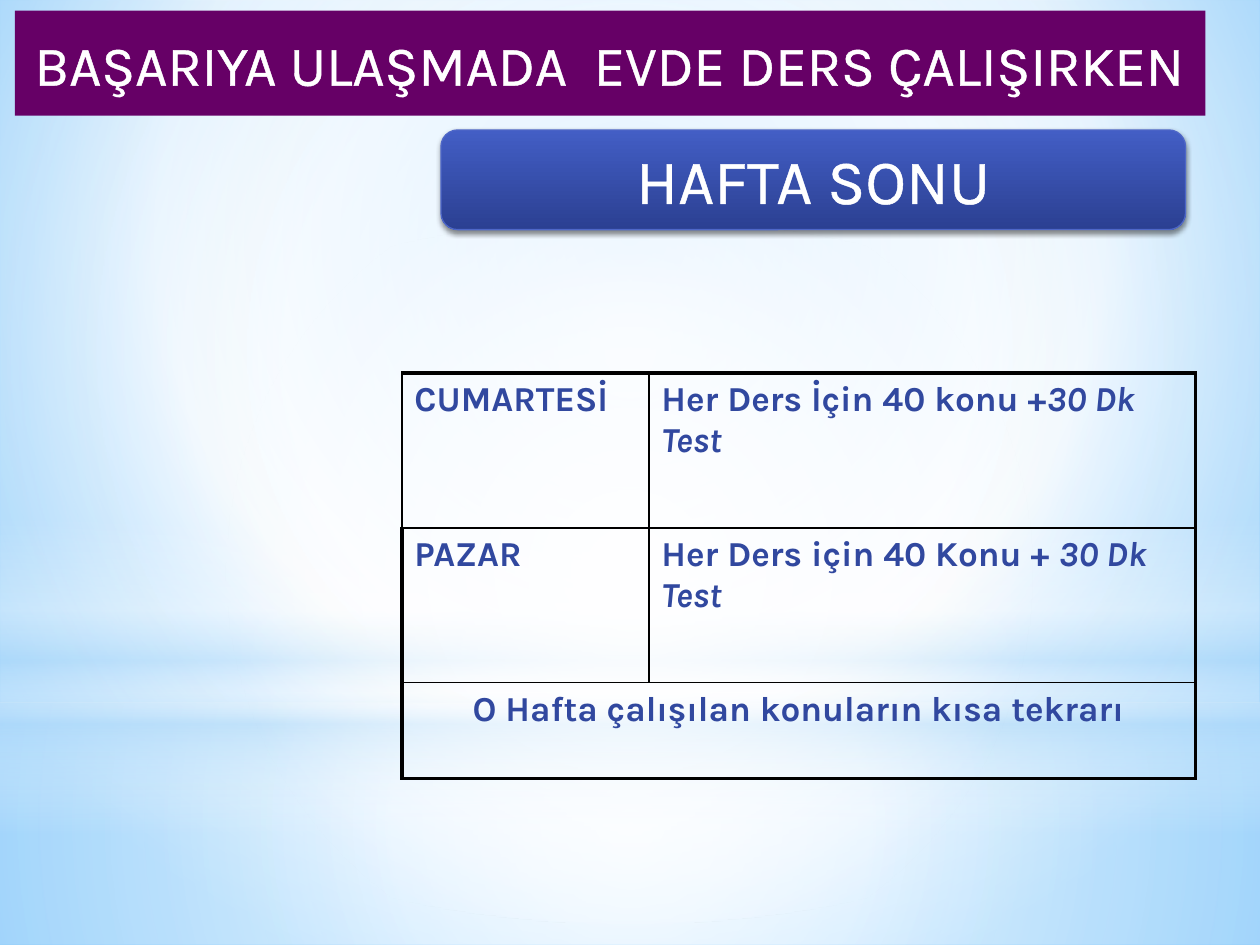
from lxml import etree
from pptx import Presentation
from pptx.dml.color import RGBColor
from pptx.enum.shapes import MSO_SHAPE
from pptx.enum.text import MSO_ANCHOR, MSO_AUTO_SIZE, PP_ALIGN
from pptx.oxml.ns import qn
from pptx.util import Cm, Pt

RECTANGLE = MSO_SHAPE.RECTANGLE
ROUNDED = MSO_SHAPE.ROUNDED_RECTANGLE
ELLIPSE = MSO_SHAPE.OVAL
CENTER, LEFT = PP_ALIGN.CENTER, PP_ALIGN.LEFT
TOP, MIDDLE = MSO_ANCHOR.TOP, MSO_ANCHOR.MIDDLE
GROW = MSO_AUTO_SIZE.SHAPE_TO_FIT_TEXT
HALO = (50, 50, 50, 50)


def color(value):
    return RGBColor.from_string(value)


def node(parent, tag, **attributes):
    values = {key: str(value) for key, value in attributes.items()}
    return etree.SubElement(parent, qn(tag), values)


class StudySlide:
    """Draws the study plan elements on one slide in a shared style."""

    font = "Karla"
    white, black, ink = "FFFFFF", "000000", "31489F"

    def __init__(self, deck):
        self.slide = deck.slides.add_slide(deck.slide_layouts[5])

    def gradient(self, owner, fill, stops, focus=None):
        fill.solid()
        solid = owner.find(qn("a:solidFill"))
        grad = etree.Element(qn("a:gradFill"), rotWithShape="1")
        stop_list = node(grad, "a:gsLst")
        for position, tint, opacity in stops:
            stop = node(stop_list, "a:gs", pos=position * 1000)
            shade = node(stop, "a:srgbClr", val=tint)
            if opacity < 100:
                node(shade, "a:alpha", val=opacity * 1000)
        if focus:
            path = node(grad, "a:path", path="circle")
            sides = {side: value * 1000 for side, value in zip("ltrb", focus)}
            node(path, "a:fillToRect", **sides)
        else:
            node(grad, "a:lin", ang=90 * 60000, scaled=0)
        owner.replace(solid, grad)

    def background(self, stops, focus):
        fill = self.slide.background.fill
        fill.solid()
        owner = self.slide.element.find(".//" + qn("p:bgPr"))
        self.gradient(owner, fill, stops, focus)

    def panel(self, kind, box, stops, focus=None):
        panel = self.slide.shapes.add_shape(kind, *map(Cm, box))
        self.gradient(panel.element.spPr, panel.fill, stops, focus)
        panel.line.fill.background()
        panel.shadow.inherit = False
        return panel

    def paragraph(self, paragraph, runs, size, tint, align, before, bold=False):
        paragraph.alignment = align
        spacing = etree.Element(qn("a:spcBef"))
        node(spacing, "a:spcPct", val=before * 1000)
        paragraph._p.get_or_add_pPr().insert(0, spacing)
        for text, italic in runs:
            run = paragraph.add_run()
            run.text = text
            style = {"name": self.font, "size": Pt(size), "bold": bold, "italic": italic}
            for key, value in style.items():
                setattr(run.font, key, value)
            run.font.color.rgb = color(tint)

    def heading(self, shape, text, size, anchor):
        frame = shape.text_frame
        layout = {"word_wrap": True, "auto_size": GROW, "vertical_anchor": anchor}
        for key, value in layout.items():
            setattr(frame, key, value)
        line = frame.paragraphs[0]
        self.paragraph(line, [(text, False)], size, self.white, CENTER, 50)
        properties = line._p.get_or_add_pPr()
        properties.set("marL", str(Cm(0.95)))
        properties.set("indent", str(Cm(-0.95)))
        outline = etree.Element(qn("a:ln"), w=str(Pt(1.45)))
        node(node(outline, "a:solidFill"), "a:srgbClr", val=self.white)
        line.runs[0].font._element.insert(0, outline)

    def title(self, text, box, fill):
        title = self.slide.shapes.title
        for key, value in zip(("left", "top", "width", "height"), box):
            setattr(title, key, Cm(value))
        title.fill.solid()
        title.fill.fore_color.rgb = color(fill)
        self.heading(title, text, 32, MIDDLE)
        title.element.getparent().append(title.element)

    def badge(self, text, box, stops, edge):
        badge = self.panel(ROUNDED, box, stops)
        badge.line.color.rgb = color(edge)
        badge.line.width = Pt(0.75)
        effects = badge.element.spPr.find(qn("a:effectLst"))
        shadow = node(effects, "a:outerShdw", blurRad=Pt(3.1), dist=Pt(1.8),
                      dir=90 * 60000, rotWithShape=0)
        node(node(shadow, "a:srgbClr", val=self.black), "a:alpha", val=45000)
        self.heading(badge, text, 36, TOP)

    def borders(self, cell, widths):
        properties = cell._tc.get_or_add_tcPr()
        for index, (side, width) in enumerate(zip("LRTB", widths)):
            border = etree.Element(qn(f"a:ln{side}"), w=str(Pt(width)))
            node(node(border, "a:solidFill"), "a:srgbClr", val=self.black)
            properties.insert(index, border)

    def table(self, corner, columns, heights, rows):
        size = (sum(columns), sum(heights))
        frame = self.slide.shapes.add_table(
            len(heights), len(columns), *map(Cm, corner + size))
        table = frame.table
        table.first_row = table.horz_banding = False
        for column, width in zip(table.columns, columns):
            column.width = Cm(width)
        for row, height in zip(table.rows, heights):
            row.height = Cm(height)
        last_row, last_column = len(heights) - 1, len(columns) - 1
        table.cell(last_row, 0).merge(table.cell(last_row, last_column))
        for r, texts in enumerate(rows):
            for c in range(len(columns)):
                cell = table.cell(r, c)
                cell.fill.background()
                merged = r == last_row
                edges = (c == 0 and r > 0, c == last_column or merged, r == 0, merged)
                self.borders(cell, [2.25 if edge else 1 for edge in edges])
                if c < len(texts):
                    self.paragraph(cell.text_frame.paragraphs[0], texts[c], 20,
                                   self.ink, CENTER if merged else LEFT, 20, True)


def main():
    deck = Presentation()
    deck.slide_width, deck.slide_height = Cm(25.4), Cm(19.05)
    study = StudySlide(deck)
    white, sky = "FFFFFF", "B4DCFA"

    study.background([(0, "9ED5FF", 100), (60, white, 100), (100, "5BB9FF", 100)],
                     (20, 10, 20, 60))
    study.panel(RECTANGLE, (0, 14.17, 25.4, 4.88),
                [(0, white, 91), (37, white, 76), (100, sky, 79)], HALO)
    study.panel(RECTANGLE, (0, 0, 25.4, 14.17),
                [(0, white, 89), (48, white, 62), (100, sky, 79)], HALO)
    study.panel(RECTANGLE, (0, 10.46, 25.4, 6.35),
                [(0, white, 0), (29, white, 30), (45, sky, 40),
                 (55, white, 26), (65, sky, 60), (100, white, 0)])
    study.panel(ELLIPSE, (0, 4.45, 25.4, 14.17),
                [(0, white, 100), (56, white, 0)], HALO)

    study.title("BAŞARIYA ULAŞMADA  EVDE DERS ÇALIŞIRKEN",
                (0.3, 0.46, 24, 1.63), "660066")
    study.badge("HAFTA SONU", (8.89, 2.62, 15.01, 2.01),
                [(0, "435EC5", 100), (100, "2B4092", 100)], "4E67C8")

    test = ("30 Dk Test", True)
    study.table((8.1, 7.52), (4.98, 11.02), (3.12, 3.12, 1.93), [
        [[("CUMARTESİ", False)], [("Her Ders İçin 40 konu +", False), test]],
        [[("PAZAR", False)], [("Her Ders için 40 Konu + ", False), test]],
        [[("O Hafta çalışılan konuların kısa tekrarı", False)]],
    ])
    deck.save("out.pptx")


if __name__ == "__main__":
    main()
